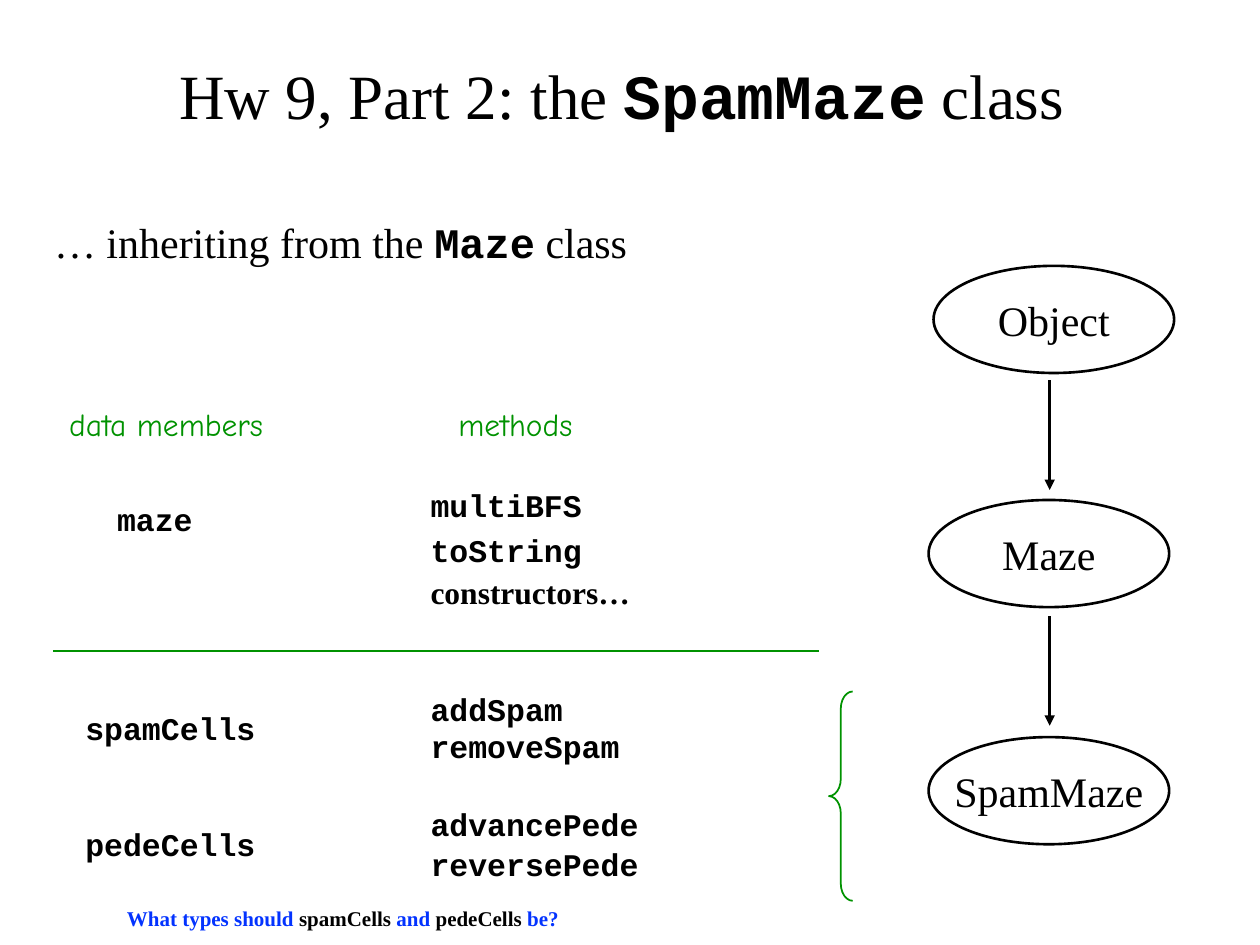
import dataclasses

import lxml.etree
import pptx
import pptx.dml.color
import pptx.enum.shapes
import pptx.enum.text
import pptx.oxml.ns
import pptx.util

Cm = pptx.util.Cm
Pt = pptx.util.Pt
Kind = pptx.enum.shapes.MSO_SHAPE
Align = pptx.enum.text.PP_ALIGN
qn = pptx.oxml.ns.qn


@dataclasses.dataclass(frozen=True)
class Theme:
    black: str = "000000"
    green: str = "009200"
    blue: str = "0333FF"
    serif: str = "Times New Roman"
    mono: str = "Courier New"
    hand: str = "Comic Neue"
    title: int = 36
    body: int = 24
    label: int = 18
    small: int = 12
    thick: float = 1.5
    thin: float = 1


class Board:
    def __init__(self, deck, theme):
        self.theme = theme
        self.slide = deck.slides.add_slide(deck.slide_layouts[6])

    def color(self, code):
        return pptx.dml.color.RGBColor.from_string(code)

    def run(self, para, text, size, font=None, bold=False, color=None):
        run = para.add_run()
        run.text = text
        run.font.size = Pt(size)
        run.font.name = font or self.theme.serif
        run.font.bold = bold
        run.font.color.rgb = self.color(color or self.theme.black)

    def text(self, left, top, width, height, size, runs, align=Align.LEFT):
        """Add a text box; each run is (text, font, bold, color), tail optional."""
        box = self.slide.shapes.add_textbox(Cm(left), Cm(top), Cm(width), Cm(height))
        frame = box.text_frame
        frame.word_wrap = True
        frame.auto_size = pptx.enum.text.MSO_AUTO_SIZE.SHAPE_TO_FIT_TEXT
        para = frame.paragraphs[0]
        para.alignment = align
        # Percentage spacing has no public setter.
        space = lxml.etree.SubElement(para._p.get_or_add_pPr(), qn("a:spcBef"))
        lxml.etree.SubElement(space, qn("a:spcPct"), val="50000")
        for text, *style in runs:
            self.run(para, text, size, *style)

    def label(self, left, top, text, font=None):
        self.text(left, top, 5.28, 1.02, self.theme.label,
                  [(text, font or self.theme.mono, True)])

    def head(self, left, text):
        self.text(left, 8.05, 5.08, 1.02, self.theme.label,
                  [(text, self.theme.hand, False, self.theme.green)], Align.CENTER)

    def shape(self, kind, left, top, width, height, color, weight):
        shape = self.slide.shapes.add_shape(
            kind, Cm(left), Cm(top), Cm(width), Cm(height))
        shape.shadow.inherit = False
        shape.fill.background()
        shape.line.color.rgb = self.color(color)
        shape.line.width = Pt(weight)
        return shape

    def oval(self, left, top, name):
        oval = self.shape(Kind.OVAL, left, top, 4.85, 2.16,
                          self.theme.black, self.theme.thick)
        frame = oval.text_frame
        frame.word_wrap = False
        frame.vertical_anchor = pptx.enum.text.MSO_ANCHOR.MIDDLE
        para = frame.paragraphs[0]
        para.alignment = Align.CENTER
        self.run(para, name, self.theme.body)

    def brace(self, left, top, width, height):
        brace = self.shape(Kind.LEFT_BRACE, left, top, width, height,
                           self.theme.green, self.theme.thin)
        brace.adjustments[0] = 0.725
        brace.adjustments[1] = 0.5

    def line(self, x1, y1, x2, y2, color, weight):
        line = self.slide.shapes.add_connector(
            pptx.enum.shapes.MSO_CONNECTOR.STRAIGHT, Cm(x1), Cm(y1), Cm(x2), Cm(y2))
        line.line.color.rgb = self.color(color)
        line.line.width = Pt(weight)
        lxml.etree.SubElement(line._element.spPr, qn("a:effectLst"))
        return line

    def arrow(self, x, top, length):
        line = self.line(x, top, x, top + length, self.theme.black, self.theme.thick)
        lxml.etree.SubElement(line.line._get_or_add_ln(), qn("a:tailEnd"),
                              type="triangle")


def main():
    deck = pptx.Presentation()
    deck.slide_width, deck.slide_height = Cm(25.4), Cm(19.05)
    theme = Theme()
    board = Board(deck, theme)
    serif, mono = theme.serif, theme.mono

    board.text(1.88, 1.02, 21.62, 1.78, theme.title,
               [("Hw 9, Part 2: the ",), ("SpamMaze", mono, True), (" class ",)],
               Align.CENTER)
    board.text(0.84, 4.24, 13.46, 1.27, theme.body,
               [("… inheriting from the ",), ("Maze", mono, True), (" class",)])

    for left, top, name in ((18.82, 5.36, "Object"), (18.72, 10.08, "Maze"),
                            (18.72, 14.86, "SpamMaze")):
        board.oval(left, top, name)
    for top in (7.67, 12.42):
        board.arrow(21.16, top, 2.21)

    board.head(0.81, "data members")
    board.head(7.85, "methods")
    for left, top, name in ((2.11, 9.96, "maze"), (1.47, 14.17, "spamCells"),
                            (1.47, 16.51, "pedeCells")):
        board.label(left, top, name)
    for top, name in ((9.68, "multiBFS"), (10.59, "toString"), (13.79, "addSpam"),
                      (14.53, "removeSpam"), (16.1, "advancePede"),
                      (16.92, "reversePede")):
        board.label(8.43, top, name)
    board.label(8.43, 11.43, "constructors…", serif)

    board.line(1.07, 13.13, 16.51, 13.13, theme.green, theme.thin)
    board.brace(16.71, 13.94, 0.48, 4.22)

    board.text(1.35, 18.14, 11.23, 0.76, theme.small,
               [("What types should ", serif, True, theme.blue),
                ("spamCells", serif, True),
                (" and ", serif, True, theme.blue),
                ("pedeCells", serif, True),
                (" be? ", serif, True, theme.blue)], Align.CENTER)
    deck.save("out.pptx")


if __name__ == "__main__":
    main()
